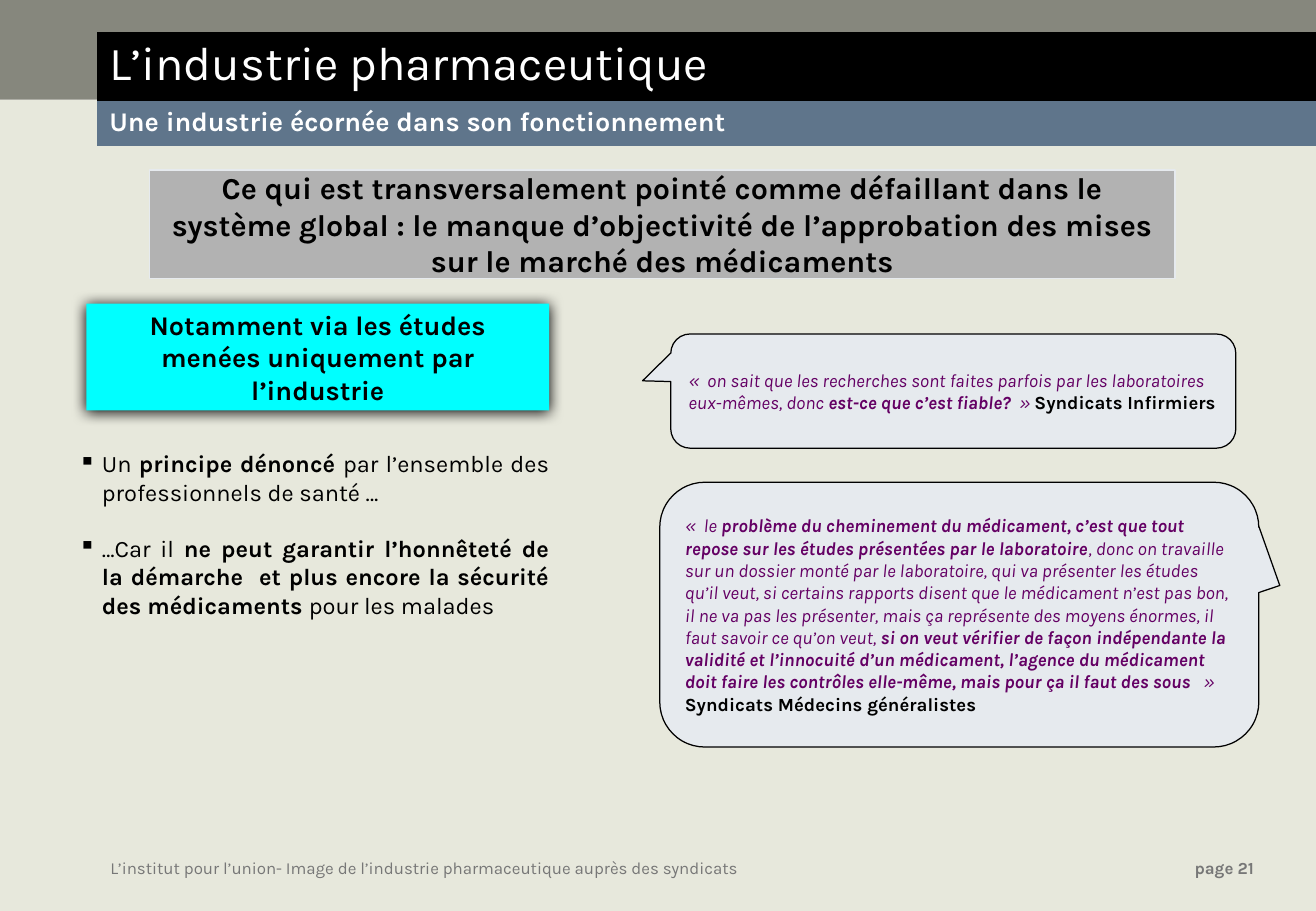
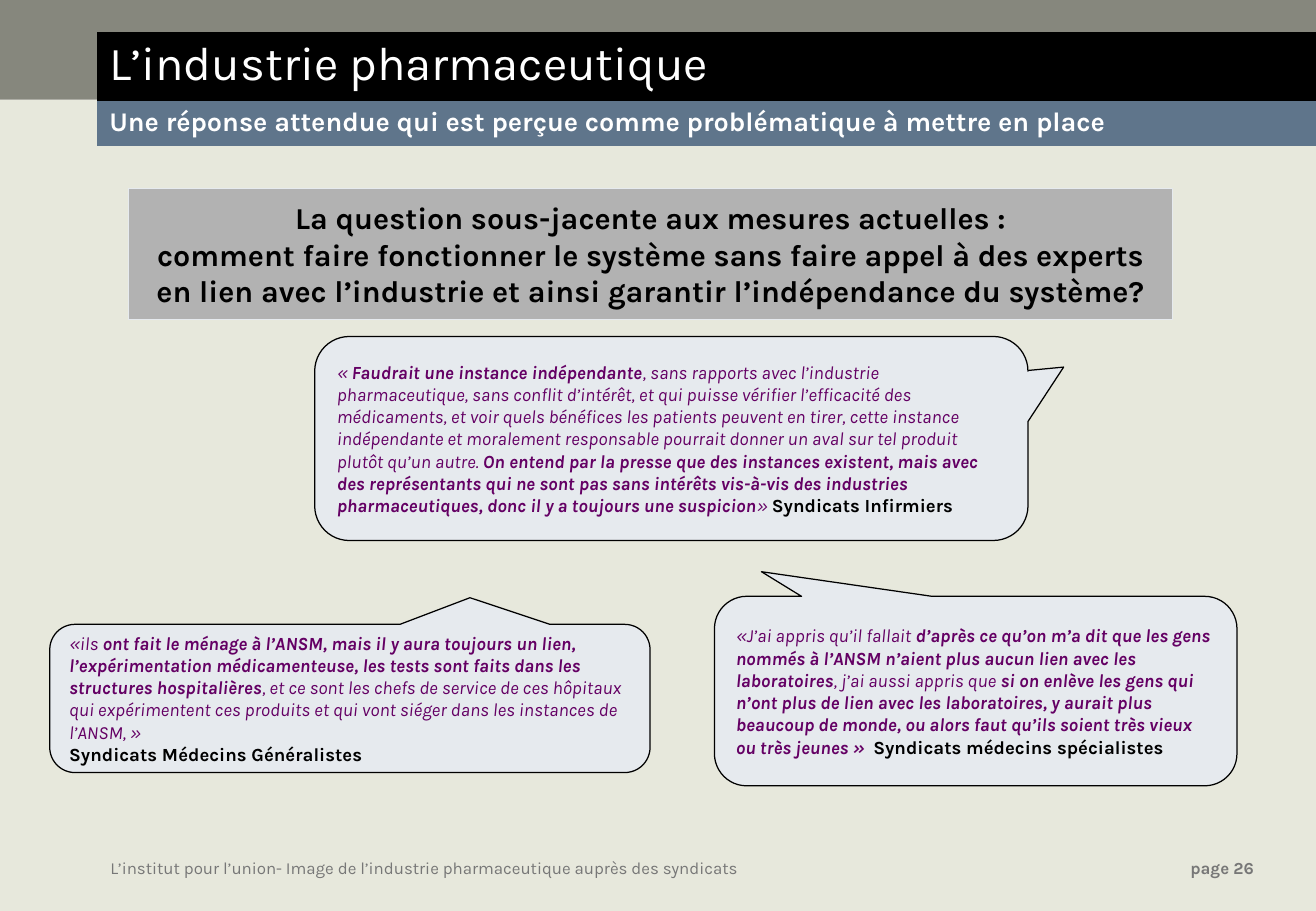
from dataclasses import dataclass

from lxml import etree
from pptx import Presentation
from pptx import util as u
from pptx.dml.color import RGBColor
from pptx.enum import shapes, text
from pptx.oxml import ns

KINDS = shapes.MSO_SHAPE if hasattr(shapes, "MSO_SHAPE") else shapes.MSO_AUTO_SHAPE_TYPE
ALIGN = text.PP_ALIGN
PLAIN = "{2D5ABB26-0587-4C30-8999-92F81FD0307C}"


@dataclass(frozen=True)
class Theme:
    font: str = "Karla"
    page: str = "E7E8DC"
    band: str = "86877D"
    black: str = "000000"
    white: str = "FFFFFF"
    steel: str = "5F758B"
    gray: str = "B2B2B2"
    pale: str = "E6EAEE"
    cyan: str = "00FFFF"
    plum: str = "640064"
    muted: str = "777777"
    title: int = 28
    head: int = 18
    sub: int = 16
    body: int = 14
    quote: int = 11
    foot: int = 10


def rgb(code):
    return RGBColor.from_string(code)


def node(parent, tag, **attrs):
    return etree.SubElement(parent, ns.qn(tag), {k: str(v) for k, v in attrs.items()})


def write(para, words, size, color=Theme.black, bold=False, italic=False, align=None):
    """Add words to a paragraph; asterisks switch bold on and off."""
    if align is not None:
        para.alignment = align
    for i, part in enumerate(words.split("*")):
        if part:
            run = para.add_run()
            run.text = part
            font = run.font
            font.name, font.size = Theme.font, u.Pt(size)
            font.bold, font.italic = bold != bool(i % 2), italic
            font.color.rgb = rgb(color)


class Deck:
    def __init__(self, theme):
        self.theme = theme
        self.file = Presentation()
        self.file.slide_width = u.Inches(10.83)
        self.file.slide_height = u.Inches(7.5)
        self.slide = None

    def start(self, title, sub, page):
        t = self.theme
        self.slide = self.file.slides.add_slide(self.file.slide_layouts[6])
        self.shape((0, 0.82, 10.83, 6.68), t.page)
        self.shape((0, 0, 10.83, 0.82), t.band)
        self.footer(page)
        self.header(title, sub)

    def shape(self, box, fill, line=None, kind=KINDS.RECTANGLE):
        item = self.slide.shapes.add_shape(kind, *map(u.Inches, box))
        item.fill.solid()
        item.fill.fore_color.rgb = rgb(fill)
        if line:
            item.line.color.rgb = rgb(line)
            item.line.width = u.Pt(0.75)
        else:
            item.line.fill.background()
        item.shadow.inherit = False
        return item

    def label(self, box):
        frame = self.slide.shapes.add_textbox(*map(u.Inches, box)).text_frame
        frame.word_wrap = True
        return frame

    def footer(self, page):
        t = self.theme
        para = self.label((0.81, 7.01, 10.02, 0.27)).paragraphs[0]
        words = "L’institut pour l’union- Image de l’industrie pharmaceutique auprès des syndicats"
        write(para, f"{words}\t*page {page}*", t.foot, t.muted)
        tabs = node(para._p.get_or_add_pPr(), "a:tabLst")
        node(tabs, "a:tab", pos=u.Inches(9.41), algn="r")

    def header(self, title, sub):
        t = self.theme
        rows = ((title, 0.57, t.black, t.title, False), (sub, 0.37, t.steel, t.sub, True))
        box = map(u.Inches, (0.8, 0.26, 10.04, 0.94))
        frame = self.slide.shapes.add_table(len(rows), 1, *box)
        table = frame.table
        table.first_row = table.horz_banding = False
        next(frame._element.iter(ns.qn("a:tableStyleId"))).text = PLAIN
        for i, (words, high, fill, size, bold) in enumerate(rows):
            table.rows[i].height = u.Inches(high)
            cell = table.cell(i, 0)
            cell.fill.solid()
            cell.fill.fore_color.rgb = rgb(fill)
            write(cell.text_frame.paragraphs[0], words, size, t.white, bold)

    def banner(self, box, *lines):
        t = self.theme
        frame = self.shape(box, t.gray, t.pale).text_frame
        for i, words in enumerate(lines):
            para = frame.add_paragraph() if i else frame.paragraphs[0]
            write(para, words, t.head, bold=True, align=ALIGN.CENTER)

    def focus(self, box, words):
        t = self.theme
        item = self.shape(box, t.cyan)
        glow = item._element.spPr.find(ns.qn("a:effectLst"))
        shade = node(glow, "a:outerShdw", blurRad=u.Pt(8.5), dist=u.Pt(1),
                     dir=5400000, algn="ctr", rotWithShape=0)
        node(shade, "a:srgbClr", val=t.black)
        write(item.text_frame.paragraphs[0], words, t.sub, bold=True, align=ALIGN.CENTER)

    def bullets(self, box, *lines):
        frame = self.label(box)
        for i, words in enumerate(lines):
            para = frame.add_paragraph() if i else frame.paragraphs[0]
            if i:
                para.space_before = u.Pt(16.4)
            write(para, words, self.theme.body, align=ALIGN.JUSTIFY)
            props = para._p.get_or_add_pPr()
            props.set("marL", str(u.Inches(0.19)))
            props.set("indent", str(-u.Inches(0.19)))
            node(props, "a:buChar", char="▪")

    def quote(self, box, tip, words, who, split=False):
        t = self.theme
        item = self.shape(box, t.pale, t.black, KINDS.ROUNDED_RECTANGULAR_CALLOUT)
        for i, value in enumerate((*tip, 0.17)):
            item.adjustments[i] = value
        frame = item.text_frame
        para = frame.paragraphs[0]
        write(para, words, t.quote, t.plum, italic=True, align=ALIGN.LEFT)
        if split:
            para = frame.add_paragraph()
        write(para, who, t.quote, bold=True, align=ALIGN.LEFT)


def main():
    deck = Deck(Theme())
    title = "L’industrie pharmaceutique"

    deck.start(title, "Une industrie écornée dans son fonctionnement", 21)
    deck.bullets(
        (0.55, 3.65, 4.07, 1.99),
        "Un *principe dénoncé *par l’ensemble des professionnels de santé …",
        "…Car il *ne peut garantir l’honnêteté de la démarche  et plus encore "
        "la sécurité des médicaments *pour les malades",
    )
    deck.banner(
        (1.23, 1.4, 8.44, 0.89),
        "Ce qui est transversalement pointé comme défaillant dans le système global : "
        "le manque d’objectivité de l’approbation des mises sur le marché des médicaments",
    )
    deck.focus((0.71, 2.5, 3.81, 0.88),
               "Notamment via les études menées uniquement par l’industrie")
    deck.quote(
        (5.52, 2.75, 4.65, 0.94), (-0.55, -0.09),
        "«  on sait que les recherches sont faites parfois par les laboratoires "
        "eux-mêmes, donc *est-ce que c’est fiable? * » ",
        "Syndicats Infirmiers",
    )
    deck.quote(
        (5.43, 3.97, 4.93, 2.18), (0.535, -0.11),
        "«  le *problème du cheminement du médicament, c’est que tout repose sur les "
        "études présentées par le laboratoire*, donc on travaille sur un dossier monté "
        "par le laboratoire, qui va présenter les études qu’il veut, si certains rapports "
        "disent que le médicament n’est pas bon, il ne va pas les présenter, mais ça "
        "représente des moyens énormes, il faut savoir ce qu’on veut, *si on veut vérifier "
        "de façon indépendante la validité et l’innocuité d’un médicament, l’agence du "
        "médicament doit faire les contrôles elle-même, mais pour ça il faut des sous*   »",
        "Syndicats Médecins généralistes", split=True,
    )

    deck.start(title, "Une réponse attendue qui est perçue comme problématique à mettre en place", 26)
    deck.banner(
        (1.06, 1.55, 8.59, 1.08),
        "La question sous-jacente aux mesures actuelles :",
        "comment faire fonctionner le système sans faire appel à des experts en lien "
        "avec l’industrie et ainsi garantir l’indépendance du système?",
    )
    deck.quote(
        (0.41, 5.14, 4.94, 1.22), (0.2, -0.68),
        "«ils *ont fait le ménage à l’ANSM, mais il y aura toujours un lien, "
        "l’expérimentation médicamenteuse, les tests sont faits dans les structures "
        "hospitalières*, et ce sont les chefs de service de ces hôpitaux qui expérimentent "
        "ces produits et qui vont siéger dans les instances de l’ANSM, »",
        "Syndicats Médecins Généralistes", split=True,
    )
    deck.quote(
        (5.88, 4.91, 4.3, 1.56), (-0.41, -0.63),
        "«J’ai appris qu’il fallait *d’après ce qu’on m’a dit que les gens nommés à l’ANSM "
        "n’aient plus aucun lien avec les laboratoires*, j’ai aussi appris que *si on enlève "
        "les gens qui n’ont plus de lien avec les laboratoires, y aurait plus beaucoup de "
        "monde, ou alors faut qu’ils soient très vieux ou très jeunes »  *",
        "Syndicats médecins spécialistes",
    )
    deck.quote(
        (2.59, 2.77, 5.87, 1.68), (0.55, -0.35),
        "« *Faudrait une instance indépendante*, sans rapports avec l’industrie "
        "pharmaceutique, sans conflit d’intérêt, et qui puisse vérifier l’efficacité des "
        "médicaments, et voir quels bénéfices les patients peuvent en tirer, cette instance "
        "indépendante et moralement responsable pourrait donner un aval sur tel produit "
        "plutôt qu’un autre. *On entend par la presse que des instances existent, mais avec "
        "des représentants qui ne sont pas sans intérêts vis-à-vis des industries "
        "pharmaceutiques, donc il y a toujours une suspicion*» ",
        "Syndicats Infirmiers",
    )
    deck.file.save("out.pptx")


if __name__ == "__main__":
    main()
